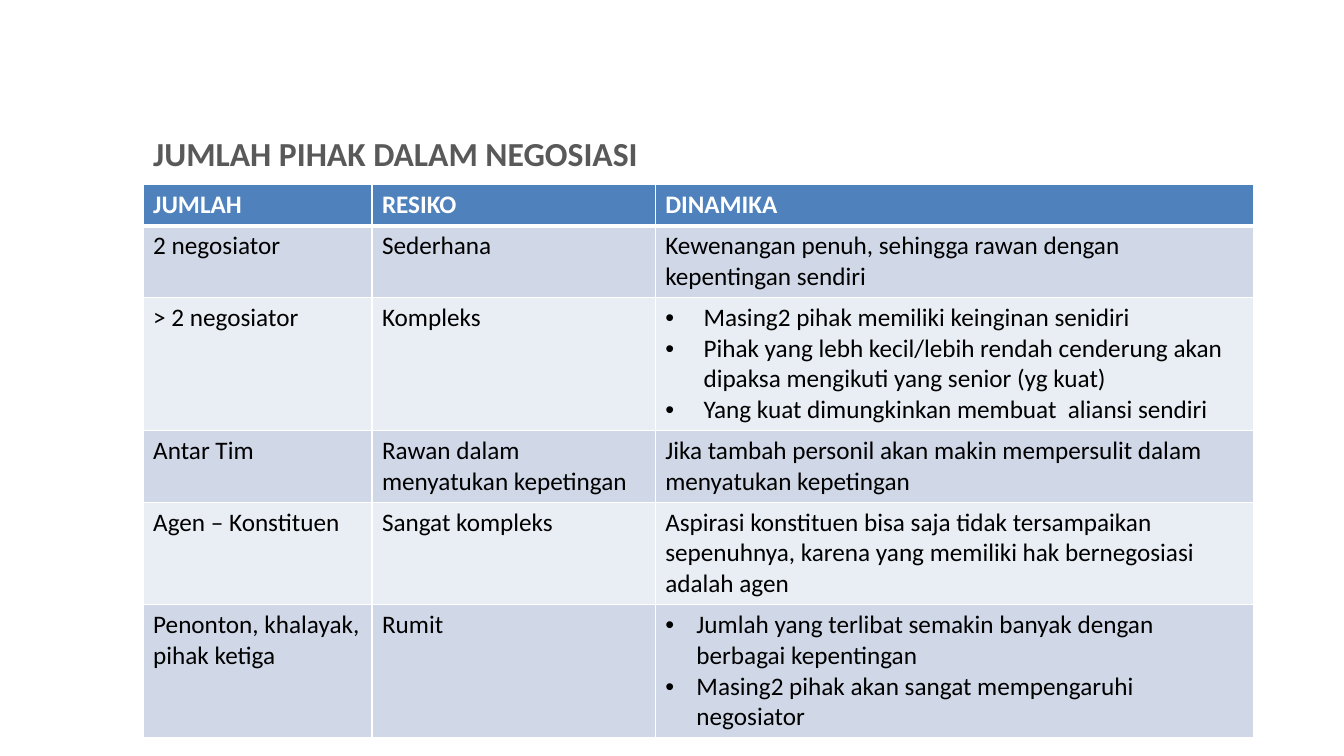
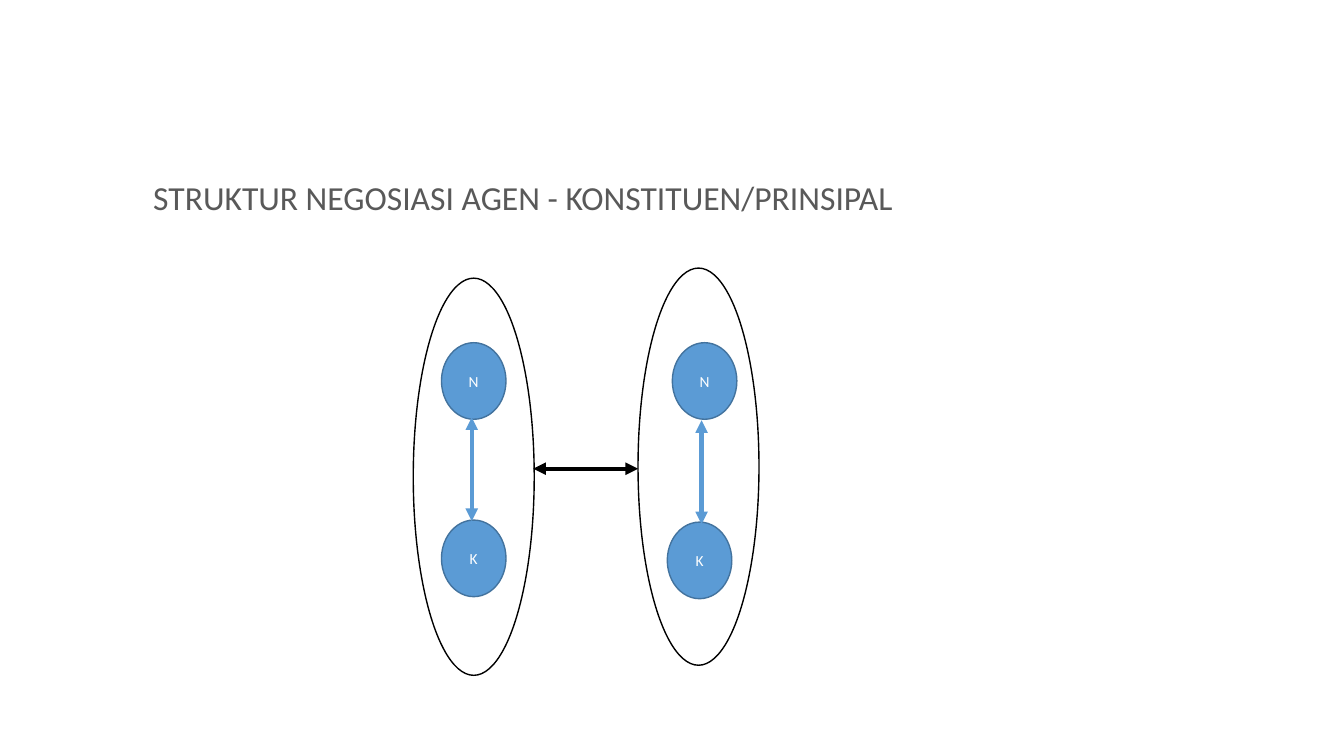
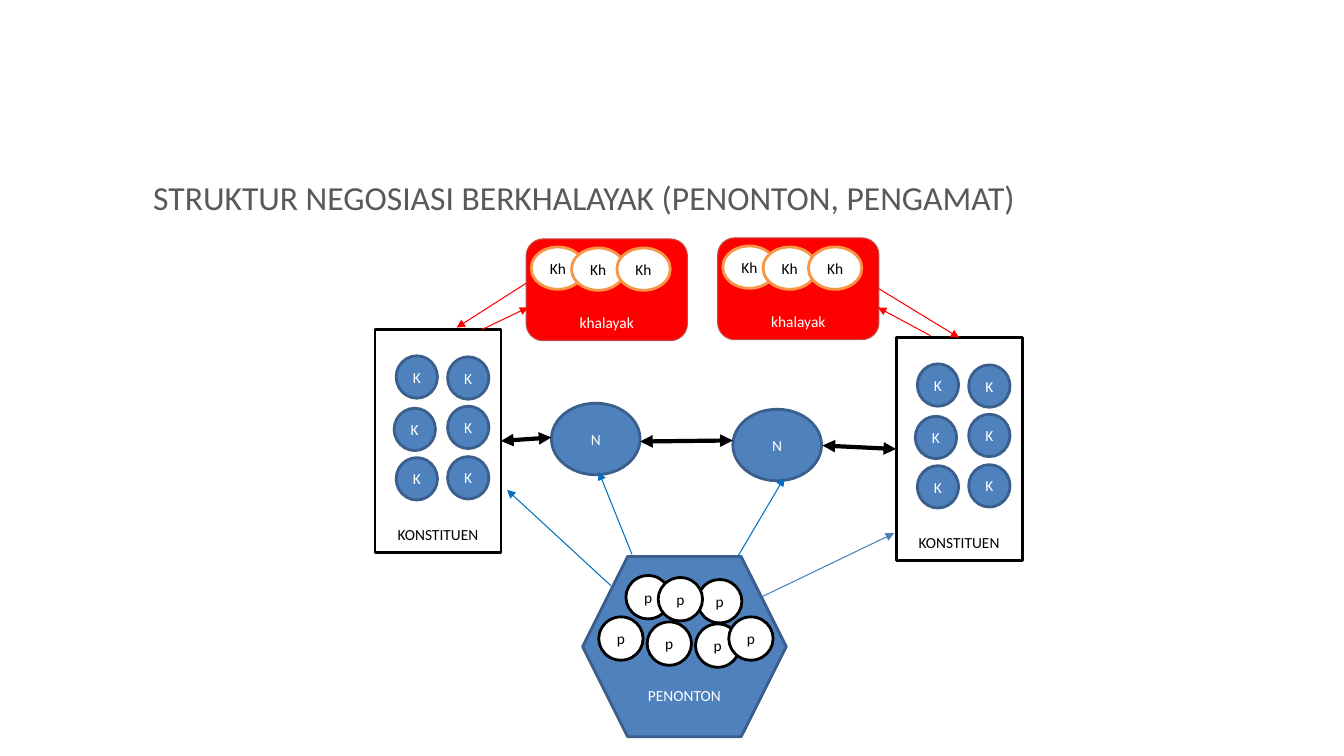
import lxml.etree
import pptx
import pptx.dml.color
import pptx.enum.shapes
import pptx.enum.text
import pptx.oxml.ns
import pptx.util

RGB = pptx.dml.color.RGBColor
KIND = pptx.enum.shapes.MSO_SHAPE
ALIGN = pptx.enum.text.PP_ALIGN
ANCHOR = pptx.enum.text.MSO_ANCHOR
Pt = pptx.util.Pt
qn = pptx.oxml.ns.qn

WHITE = RGB(0xFF, 0xFF, 0xFF)
BLACK = RGB(0, 0, 0)
GRAY = RGB(0x59, 0x59, 0x59)
BLUE = RGB(0x4F, 0x81, 0xBD)
NAVY = RGB(0x3A, 0x5F, 0x8C)
SKY = RGB(0x5B, 0x9B, 0xD5)
STEEL = RGB(0x43, 0x73, 0x9E)
AZURE = RGB(0x00, 0x70, 0xC0)
DENIM = RGB(0x4B, 0x7E, 0xBC)
RED = RGB(0xFF, 0, 0)
BRICK = RGB(0xC0, 0x50, 0x4D)
ORANGE = RGB(0xF7, 0x96, 0x46)
BANDS = (RGB(0xE9, 0xED, 0xF4), RGB(0xD0, 0xD8, 0xE8))

FACE = "Calibri"
CELL = pptx.util.Inches(0.1)
COLS, ROWS = 133.33, 75

PLAIN = {"fill": WHITE, "line": BLACK, "width": 1, "ink": BLACK}
AGENT = {"fill": SKY, "line": STEEL, "width": 1, "ink": WHITE}
NODE = {"fill": BLUE, "line": NAVY, "width": 2, "ink": WHITE}
FRAME = {"fill": WHITE, "line": BLACK, "width": 2, "ink": BLACK}
CROWD = {"fill": RED, "line": BRICK, "width": 0.75, "ink": WHITE}
HEAD = {"fill": WHITE, "line": ORANGE, "width": 2, "ink": BLACK}

TABLE = (
    ("JUMLAH", "RESIKO", "DINAMIKA"),
    ("2 negosiator", "Sederhana",
     "Kewenangan penuh, sehingga rawan dengan kepentingan sendiri"),
    ("> 2 negosiator", "Kompleks",
     (3.8, "Masing2 pihak memiliki keinginan senidiri",
      "Pihak yang lebh kecil/lebih rendah cenderung akan dipaksa mengikuti yang senior (yg kuat)",
      "Yang kuat dimungkinkan membuat  aliansi sendiri")),
    ("Antar Tim", "Rawan dalam menyatukan kepetingan",
     "Jika tambah personil akan makin mempersulit dalam menyatukan kepetingan"),
    ("Agen – Konstituen", "Sangat kompleks",
     "Aspirasi konstituen bisa saja tidak tersampaikan sepenuhnya, "
     "karena yang memiliki hak bernegosiasi adalah agen"),
    ("Penonton, khalayak, pihak ketiga", "Rumit",
     (3.1, "Jumlah yang terlibat semakin banyak dengan berbagai kepentingan",
      "Masing2 pihak akan sangat mempengaruhi negosiator")),
)


def grid(*cells):
    return [int(n * CELL) for n in cells]


def put(item, **vals):
    for name, val in vals.items():
        setattr(item, name, val)


def style(font, size, ink, bold=False):
    put(font, name=FACE, size=Pt(size), bold=bold)
    font.color.rgb = ink


def start(deck, text, top, bold=False):
    slide = deck.slides.add_slide(deck.slide_layouts[5])
    title = slide.shapes.title
    left, top, width, height = grid(14.2, top, 110.2, 4.7)
    put(title, left=left, top=top, width=width, height=height)
    put(title.text_frame, text=text, word_wrap=True,
        vertical_anchor=ANCHOR.TOP, auto_size=pptx.enum.text.MSO_AUTO_SIZE.NONE)
    para = title.text_frame.paragraphs[0]
    para.alignment = ALIGN.LEFT
    style(para.font, 24, GRAY, bold)
    return slide


def edge(cell, side, width):
    line = lxml.etree.SubElement(cell._tc.get_or_add_tcPr(), qn("a:ln" + side),
                                 w=str(Pt(width)))
    fill = lxml.etree.SubElement(line, qn("a:solidFill"))
    lxml.etree.SubElement(fill, qn("a:srgbClr"), val=str(WHITE))


def bullet(para, indent):
    props = para._p.get_or_add_pPr()
    props.set("marL", str(grid(indent)[0]))
    props.set("indent", str(-grid(indent)[0]))
    lxml.etree.SubElement(props, qn("a:buFont"), typeface="Arial")
    lxml.etree.SubElement(props, qn("a:buChar"), char="•")


def write(cell, text, row):
    top = row == 0
    for side in "LRTB":
        thick = (row, side) in ((0, "B"), (1, "T"))
        edge(cell, side, 3 if thick else 1)
    cell.fill.solid()
    cell.fill.fore_color.rgb = BLUE if top else BANDS[row % 2]
    indent, *lines = (0, text) if isinstance(text, str) else text
    cell.text = "\n".join(lines)
    for para in cell.text_frame.paragraphs:
        if indent:
            bullet(para, indent)
        style(para.font, 18, WHITE if top else BLACK, top)


def chart(slide):
    wide = (22.7, 28.1, 59.4)
    table = slide.shapes.add_table(
        len(TABLE), len(wide), *grid(14.2, 18.3, sum(wide), 4.1 * len(TABLE))).table
    for col, size in zip(table.columns, grid(*wide)):
        col.width = size
    for row, texts in enumerate(TABLE):
        for col, text in enumerate(texts):
            write(table.cell(row, col), text, row)


def shape(slide, kind, box, look, text="", drop=0):
    item = slide.shapes.add_shape(kind, *grid(*box))
    item.shadow.inherit = False
    item.fill.solid()
    item.fill.fore_color.rgb = look["fill"]
    item.line.color.rgb = look["line"]
    item.line.width = Pt(look["width"])
    if text:
        frame = item.text_frame
        put(frame, text=text, word_wrap=False, vertical_anchor=ANCHOR.MIDDLE,
            margin_left=0, margin_right=0, margin_bottom=0,
            margin_top=grid(2 * drop)[0])
        para = frame.paragraphs[0]
        para.alignment = ALIGN.CENTER
        style(para.font, 11, look["ink"])
    return item


def discs(slide, spots, size, look, text, left=0, top=0):
    for x, y in spots:
        shape(slide, KIND.OVAL, (left + x, top + y, *size), look, text)


def arrow(slide, ends, ink, width=0.75, both=False, tail=None, tip=None):
    link = slide.shapes.add_connector(
        pptx.enum.shapes.MSO_CONNECTOR.STRAIGHT, *grid(*ends))
    link.line.color.rgb = ink
    link.line.width = Pt(width)
    if tail:
        link.begin_connect(*tail)
    if tip:
        link.end_connect(*tip)
    props = link.element.spPr
    line = props.find(qn("a:ln"))
    for name in ("headEnd", "tailEnd") if both else ("tailEnd",):
        lxml.etree.SubElement(line, qn("a:" + name), type="triangle")
    lxml.etree.SubElement(props, qn("a:effectLst"))


def voters(slide, left, top):
    frame = shape(slide, KIND.RECTANGLE, (left, top, 12.5, 22.1), FRAME,
                  "KONSTITUEN", 9.3)
    spots = ((2.1, 2.6), (7.2, 2.7), (7.2, 12.6), (2.1, 12.7), (7.2, 7.6), (1.9, 7.8))
    discs(slide, spots, (4.1, 4.2), NODE, "K", left, top)
    return frame


def crowd(slide, left, top):
    frame = shape(slide, KIND.ROUNDED_RECTANGLE, (left, top, 16, 10.1), CROWD,
                  "khalayak", 3.2)
    discs(slide, ((0.5, 0.8), (4.5, 0.9), (9, 0.9)), (5.3, 4.2), HEAD, "Kh", left, top)
    return frame


def pairs(slide):
    for left, top in ((41, 27.6), (63.3, 26.6)):
        shape(slide, KIND.OVAL, (left, top, 12, 39.4), PLAIN)
    size = (6.4, 7.6)
    discs(slide, ((43.8, 34), (66.7, 34)), size, AGENT, "N")
    discs(slide, ((43.8, 51.6), (66.2, 51.8)), size, AGENT, "K")
    arrow(slide, (52.9, 46.5, 63.3, 46.5), BLACK, 3, True)
    for x, y in ((46.8, 41.4), (69.6, 41.7)):
        arrow(slide, (x, y, x, y + 10.3), SKY, 3, True)


def public(slide):
    discs(slide, ((54.7, 40), (72.7, 40.6)), (8.8, 7.1), NODE, "N")
    west = voters(slide, 37.2, 32.7)
    shape(slide, KIND.HEXAGON, (57.8, 55.2, 20.2, 17.9), NODE, "PENONTON", 4.8)
    spots = ((62.1, 57.1), (69, 61.9), (64.2, 61.7), (69.2, 57.5),
             (59.4, 61.2), (65.3, 57.3), (72.3, 61.2))
    discs(slide, spots, (4.4, 4.3), FRAME, "p")
    crowd(slide, 52.2, 23.7)
    east = voters(slide, 88.9, 33.5)
    fans = crowd(slide, 71.2, 23.6)

    for ends in ((60.6, 58.1, 50.3, 48.6), (62.7, 55, 59.4, 46.8),
                 (73.2, 55.2, 77.8, 47.4)):
        arrow(slide, ends, AZURE)
    arrow(slide, (75.6, 59.2, 88.7, 52.9), DENIM)
    arrow(slide, (49.9, 43.3, 54.7, 43.4), BLACK, 3, True, tail=(west, 3))
    arrow(slide, (63.5, 43.8, 72.7, 43.7), BLACK, 3, True)
    arrow(slide, (81.6, 44.2, 89.1, 44.3), BLACK, 3, True, tip=(east, 1))
    for ends in ((47.8, 32.7, 52.4, 30.5), (52.2, 28.1, 45.3, 32.5),
                 (92.3, 33.3, 87.1, 30.5)):
        arrow(slide, ends, RED)
    arrow(slide, (87.3, 28.4, 95, 33.5), RED, tail=(fans, 3), tip=(east, 0))


def main():
    deck = pptx.Presentation()
    width, height = grid(COLS, ROWS)
    put(deck, slide_width=width, slide_height=height)
    chart(start(deck, "JUMLAH PIHAK DALAM NEGOSIASI", 12.7, True))
    pairs(start(deck, "STRUKTUR NEGOSIASI AGEN - KONSTITUEN/PRINSIPAL", 17))
    public(start(deck, "STRUKTUR NEGOSIASI BERKHALAYAK (PENONTON, PENGAMAT)", 17))
    deck.save("out.pptx")


if __name__ == "__main__":
    main()
